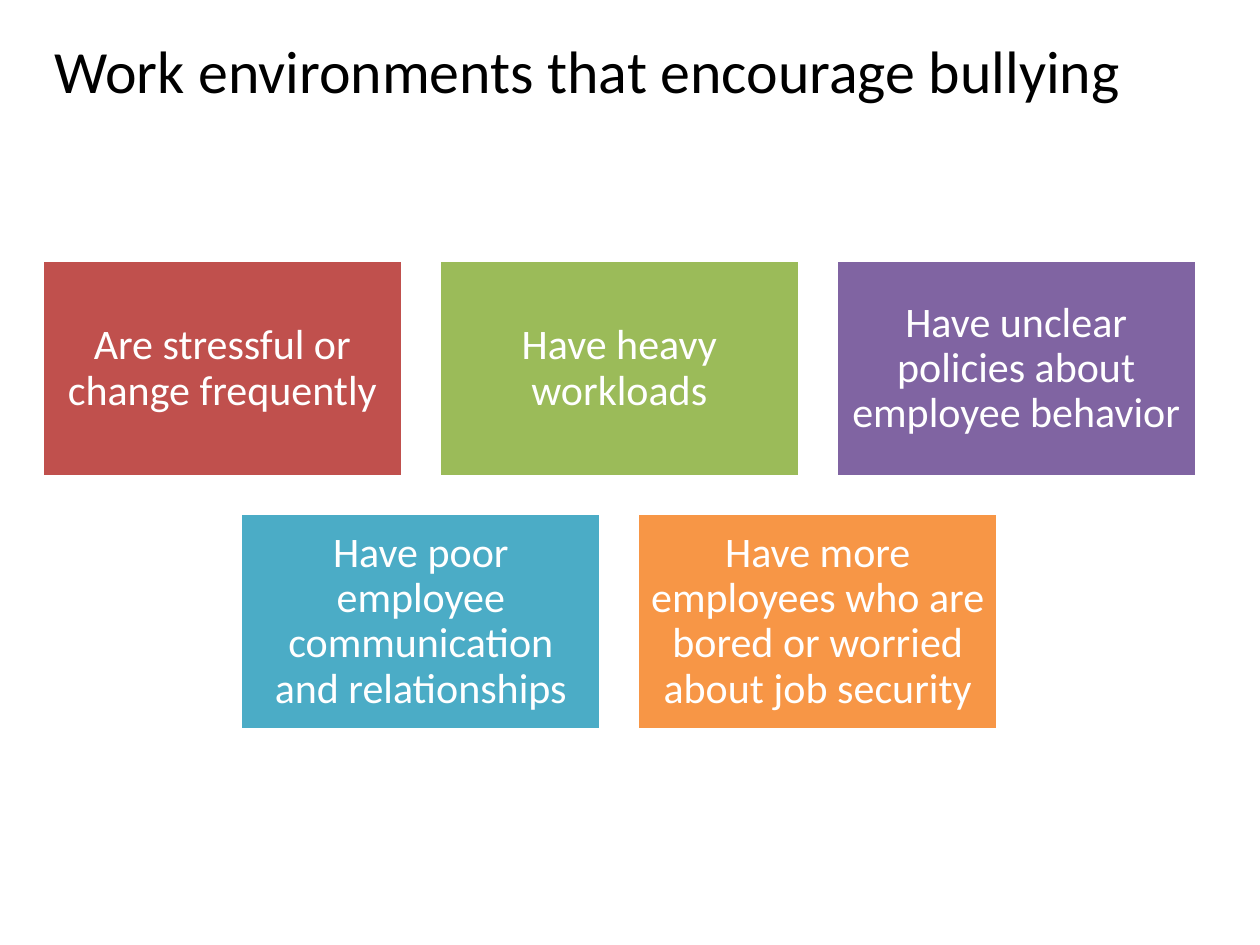
from pptx import Presentation
from pptx.dml.color import RGBColor as RGB
from pptx.enum.shapes import MSO_SHAPE as Shape
from pptx.enum.text import MSO_ANCHOR as Anchor, MSO_AUTO_SIZE as Fit, PP_ALIGN as Align
from pptx.util import Pt

BLACK = RGB(0x00, 0x00, 0x00)
WHITE = RGB(0xFF, 0xFF, 0xFF)
RED = RGB(0xC0, 0x50, 0x4D)
GREEN = RGB(0x9B, 0xBB, 0x59)
PURPLE = RGB(0x80, 0x64, 0xA2)
TEAL = RGB(0x4B, 0xAC, 0xC6)
ORANGE = RGB(0xF7, 0x96, 0x46)

WIDE, HIGH, GAP = 206.2, 123.7, 20.6
MID, TOP, INSET = 353.9, 149, 7.2

ROWS = [
    [
        ("Are stressful or change frequently", RED),
        ("Have heavy workloads", GREEN),
        ("Have unclear policies about employee behavior", PURPLE),
    ],
    [
        ("Have poor employee communication and relationships", TEAL),
        ("Have more employees who are bored or worried about job security", ORANGE),
    ],
]


def style(para, size, color, align):
    para.alignment = align
    para.font.name = "Calibri"
    para.font.size = Pt(size)
    para.font.color.rgb = color


def add_title(slide, text):
    title = slide.shapes.title
    title.left, title.top, title.width, title.height = Pt(24), Pt(21.6), Pt(678), Pt(36)
    frame = title.text_frame
    frame.text = text
    frame.auto_size = Fit.NONE
    frame.vertical_anchor = Anchor.MIDDLE
    style(frame.paragraphs[0], 34.2, BLACK, Align.LEFT)


def add_card(slide, left, top, text, color):
    card = slide.shapes.add_shape(Shape.RECTANGLE, Pt(left), Pt(top), Pt(WIDE), Pt(HIGH))
    card.shadow.inherit = False
    card.fill.solid()
    card.fill.fore_color.rgb = color
    card.line.color.rgb = WHITE
    card.line.width = Pt(2)
    frame = card.text_frame
    frame.word_wrap = True
    frame.vertical_anchor = Anchor.MIDDLE
    frame.margin_left = frame.margin_right = Pt(INSET)
    frame.margin_top = frame.margin_bottom = Pt(INSET)
    frame.text = text
    para = frame.paragraphs[0]
    para.line_spacing = 0.9
    style(para, 24, WHITE, Align.CENTER)


def add_row(slide, top, cards):
    step = WIDE + GAP
    start = MID - (len(cards) * step - GAP) / 2
    for col, (text, color) in enumerate(cards):
        add_card(slide, start + col * step, top, text, color)


def main():
    deck = Presentation()
    deck.slide_width, deck.slide_height = Pt(720), Pt(540)
    slide = deck.slides.add_slide(deck.slide_layouts[5])
    add_title(slide, "Work environments that encourage bullying")
    for row, cards in enumerate(ROWS):
        add_row(slide, TOP + row * (HIGH + GAP), cards)
    deck.save("out.pptx")


if __name__ == "__main__":
    main()
